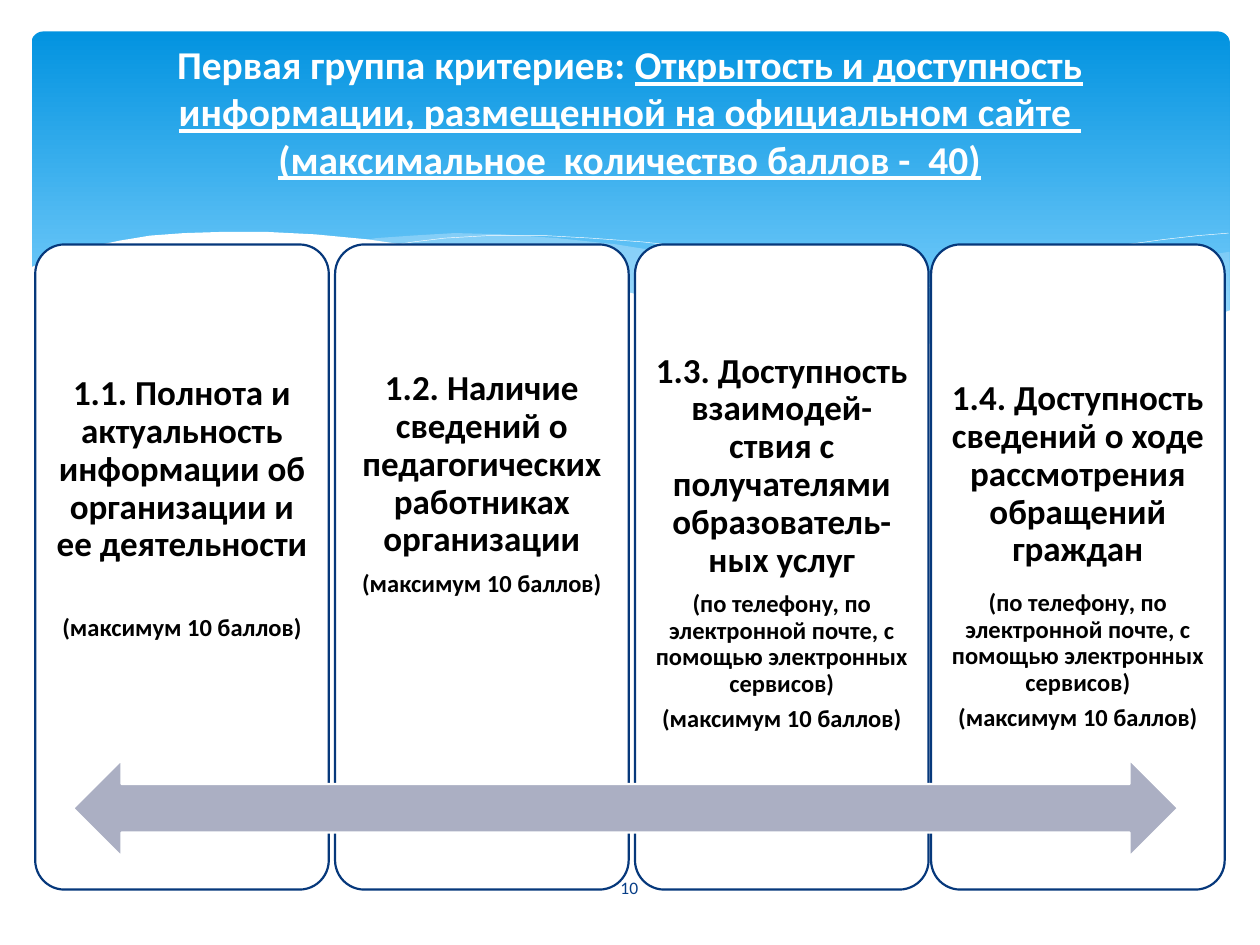
from lxml.etree import SubElement
from pptx import Presentation
from pptx.dml.color import RGBColor
from pptx.enum.shapes import MSO_SHAPE
from pptx.enum.text import MSO_ANCHOR, PP_ALIGN
from pptx.oxml.ns import qn
from pptx.util import Pt

SCALE = 9144
WHITE = RGBColor(0xFF, 0xFF, 0xFF)
BLACK = RGBColor(0, 0, 0)
NAVY = RGBColor(0x06, 0x38, 0x7B)
BLUE = RGBColor(0x07, 0x3E, 0x87)
DEEP = RGBColor(0x02, 0x93, 0xE0)
SKY = RGBColor(0x83, 0xD3, 0xFE)
PALE = RGBColor(0xC6, 0xE7, 0xFC)
GREY = RGBColor(0xAB, 0xAF, 0xC3)

TITLE = dict(size=Pt(22.5), bold=True)
HEAD = dict(size=Pt(20), bold=True)
NOTE = dict(size=Pt(14), bold=True)
SMALL = dict(size=Pt(10), bold=False)

RIGHT = [(975, 200), (948, 204), (921, 210), (891, 216), (861, 223), (805, 237),
         (753, 248), (706, 257), (661, 265), (691, 269), (719, 272), (745, 275),
         (781, 277), (824, 277), (863, 275), (897, 270), (928, 263), (949, 257),
         (976, 247), (976, 200)]
BAND = [(893, 273), (866, 269), (807, 260), (741, 247), (668, 231), (629, 222),
        (598, 214), (569, 208), (541, 203), (514, 198), (489, 194), (442, 189),
        (399, 186), (361, 185), (328, 187), (299, 189), (286, 191), (323, 196),
        (362, 203), (404, 211), (449, 222), (530, 240), (601, 255), (665, 266),
        (722, 274), (773, 277), (818, 278), (857, 277)]
CREST = [(309, 195), (328, 192), (353, 189), (387, 187), (433, 187), (469, 189),
         (510, 192), (556, 197), (608, 204), (665, 213), (727, 226), (795, 241),
         (869, 261), (907, 272)]
RISE = [(613, 257), (653, 246), (695, 235), (748, 223), (806, 210), (866, 199),
        (895, 194), (924, 190), (951, 187), (975, 185)]
BASE = [(977, 246), (950, 256), (920, 265), (887, 271), (850, 275), (809, 277),
        (761, 275), (708, 270), (648, 262), (579, 250), (503, 233), (447, 220),
        (391, 207), (340, 197), (292, 190), (250, 186), (211, 184), (177, 184),
        (146, 185), (119, 187), (95, 191), (76, 195), (59, 199), (46, 203),
        (36, 207), (23, 213), (23, 329), (977, 329)]

MAX = "(максимум 10 баллов)"
MEANS = "(по телефону, по электронной почте, с помощью электронных сервисов)"
CARDS = [
    (28, 282, 29, "1.1. Полнота и актуальность информации об организации и ее деятельности",
     [MAX]),
    (266, 278, 7, "1.2. Наличие сведений о педагогических работниках организации", [MAX]),
    (504, 264, 7, "1.3. Доступность взаимодей-ствия с получателями образователь-ных услуг",
     [MEANS, MAX]),
    (739, 286, 12, "1.4. Доступность сведений о ходе рассмотрения обращений граждан",
     [MEANS, MAX]),
]


def put(item, vals):
    for name, val in vals.items():
        setattr(item, name, val)


class Deck:
    font = "Calibri"

    def __init__(self, wide, high):
        self.show = Presentation()
        put(self.show, dict(slide_width=wide * SCALE, slide_height=high * SCALE))
        self.slide = self.show.slides.add_slide(self.show.slide_layouts[6])

    def paint(self, shape, fill, line, width):
        shape.shadow.inherit = False
        if fill is None:
            shape.fill.background()
        else:
            shape.fill.solid()
            shape.fill.fore_color.rgb = fill
        if line is None:
            shape.line.fill.background()
        else:
            shape.line.color.rgb = line
            shape.line.width = Pt(width)
        return shape

    def shape(self, kind, area, fill=None, line=None, width=1.25, adj=None):
        shape = self.slide.shapes.add_shape(kind, *(n * SCALE for n in area))
        if adj is not None:
            shape.adjustments[0] = adj
        return self.paint(shape, fill, line, width)

    def fade(self, shape, top, low):
        shape.fill.gradient()
        shape.fill.gradient_angle = 270
        for stop, tone, pos in zip(shape.fill.gradient_stops, (top, low), (0, 0.9)):
            stop.color.rgb = tone
            stop.position = pos

    def wave(self, dots, fill=None, line=None, clear=None):
        form = self.slide.shapes.build_freeform(*dots[0], scale=SCALE)
        form.add_line_segments(dots[1:], close=fill is not None)
        shape = self.paint(form.convert_to_shape(), fill, line, 0.25)
        if clear is not None:
            tone = shape.fill._xPr.find(qn("a:solidFill"))[0]
            SubElement(tone, qn("a:alpha")).set("val", str(clear * 1000))

    def text(self, area, paras, tone, inset=(10, 5), anchor=MSO_ANCHOR.TOP):
        frame = self.slide.shapes.add_textbox(*(n * SCALE for n in area)).text_frame
        side, edge = (n * SCALE for n in inset)
        put(frame, dict(word_wrap=True, vertical_anchor=anchor,
                        margin_left=side, margin_right=side,
                        margin_top=edge, margin_bottom=edge))
        for i, (runs, form) in enumerate(paras):
            para = frame.add_paragraph() if i else frame.paragraphs[0]
            put(para, dict(alignment=PP_ALIGN.CENTER, **form))
            for words, style in runs:
                run = para.add_run()
                run.text = words
                put(run.font, dict(name=self.font, **style))
                run.font.color.rgb = tone

    def card(self, left, top, gap, head, notes):
        self.shape(MSO_SHAPE.ROUNDED_RECTANGLE, (left, 194, 233, 512), WHITE, NAVY, adj=0.1)
        rows = [(head, HEAD, gap)] + [(note, NOTE, 5) for note in notes]
        paras = [([(words, style)], dict(line_spacing=0.9, space_after=Pt(after)))
                 for words, style, after in rows]
        self.text((left, top, 233, 604 - top), paras, BLACK, (16, 16))


def main():
    deck = Deck(1000, 750)
    panel = deck.shape(MSO_SHAPE.ROUNDED_RECTANGLE, (25, 25, 951, 270), adj=0.034)
    deck.fade(panel, DEEP, SKY)
    deck.wave(RIGHT, PALE, clear=29)
    deck.wave(BAND, PALE, clear=40)
    deck.wave(CREST, line=WHITE)
    deck.wave(RISE, line=WHITE)
    deck.wave(BASE, WHITE)

    title = [("Первая группа критериев: ", TITLE),
             ("Открытость и доступность информации, размещенной на официальном сайте  "
              "(максимальное  количество баллов -  40)", dict(TITLE, underline=True))]
    deck.text((50, 27, 900, 137), [(title, {})], WHITE)
    deck.text((436, 684, 127, 40), [([("10", SMALL)], {})], BLUE, anchor=MSO_ANCHOR.MIDDLE)

    for card in CARDS:
        deck.card(*card)
    deck.shape(MSO_SHAPE.LEFT_RIGHT_ARROW, (58, 603, 877, 77), GREY, WHITE)
    deck.show.save("out.pptx")


if __name__ == "__main__":
    main()
